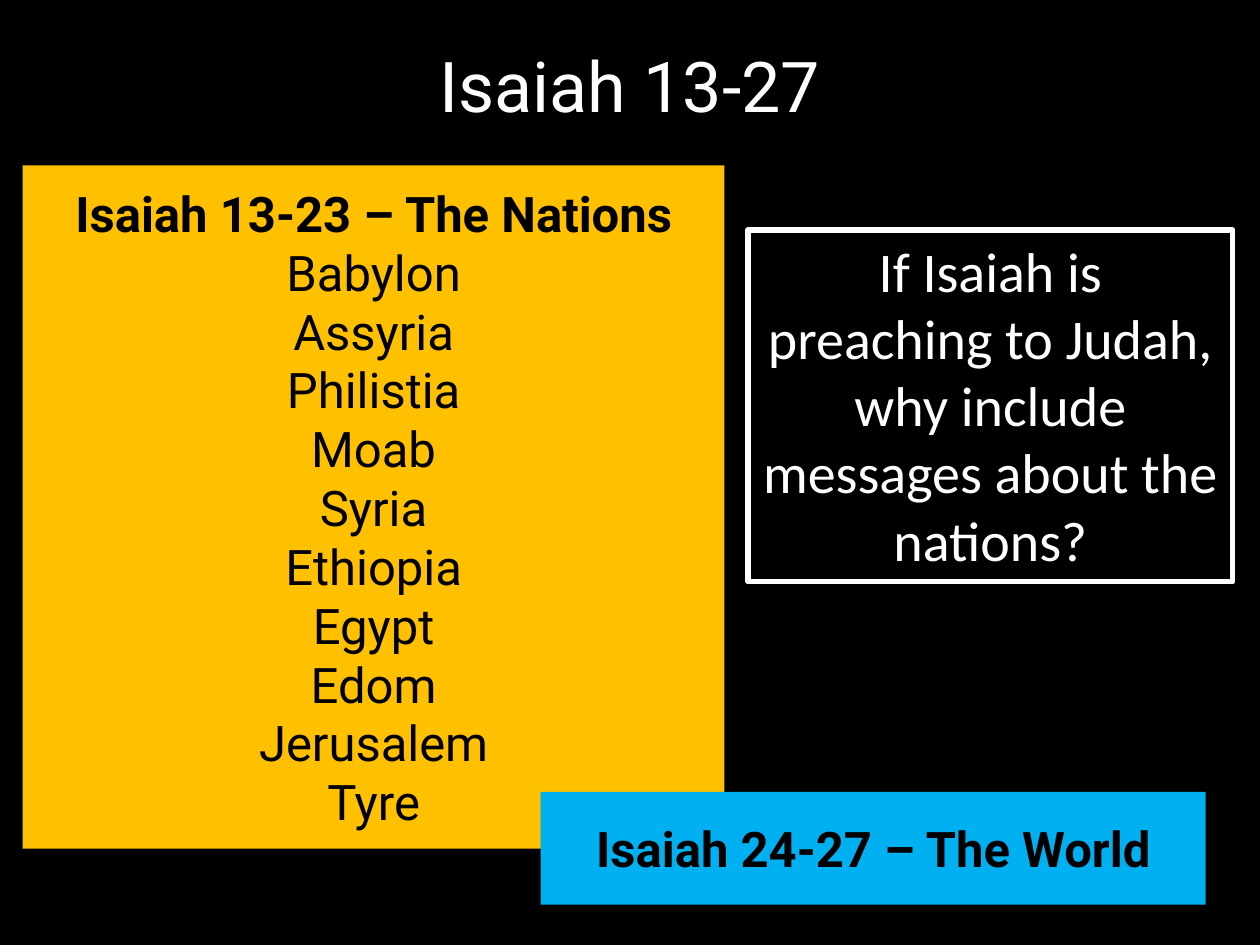
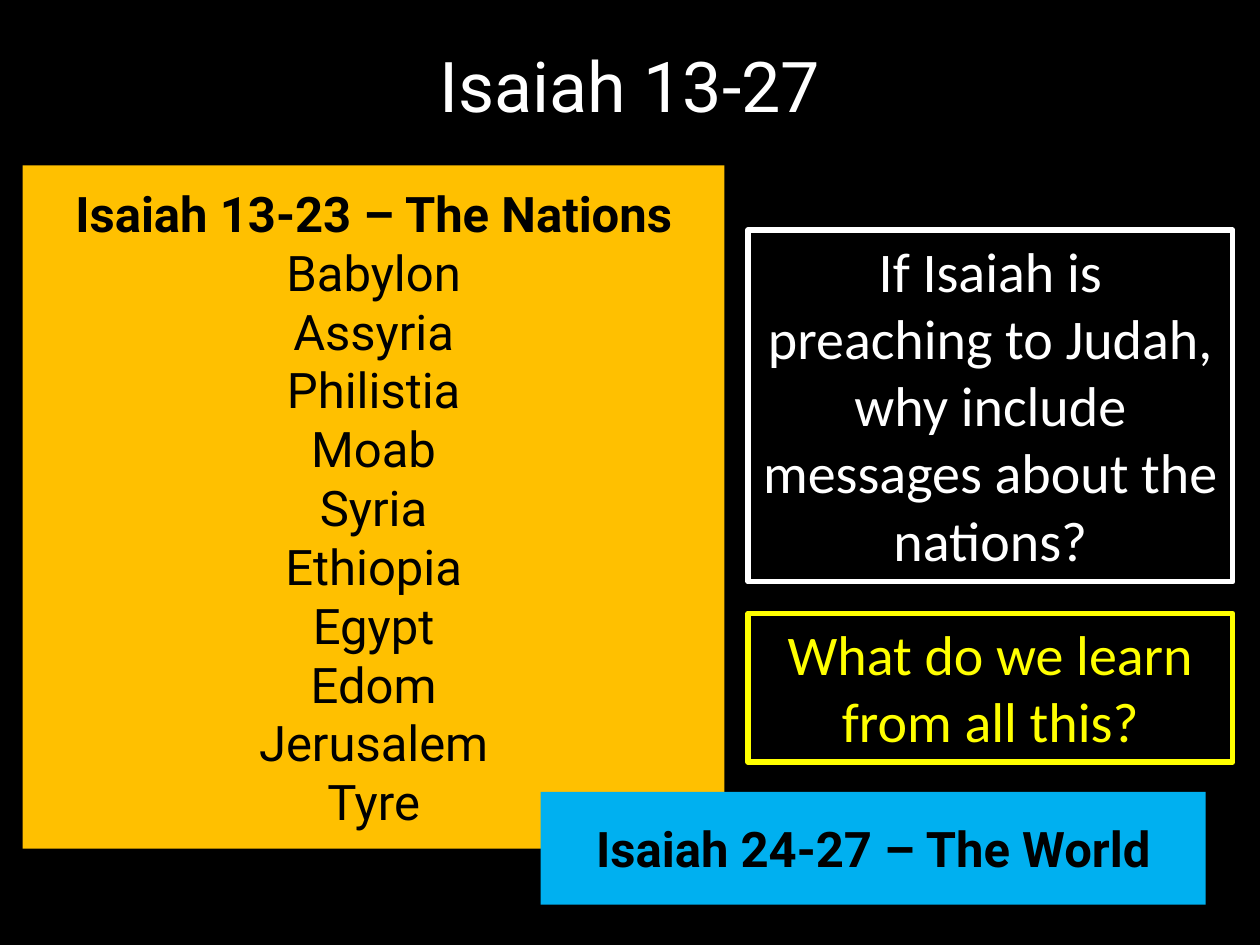
from pptx import Presentation
from pptx.dml.color import RGBColor
from pptx.enum.shapes import MSO_SHAPE as Shape
from pptx.enum.text import MSO_ANCHOR as Anchor, PP_ALIGN as Align
from pptx.util import Pt

BLACK, WHITE, YELLOW = "000000", "FFFFFF", "FFFF00"
GOLD, BLUE = "FFC000", "00B0F0"
HEADING_FONT, QUESTION_FONT = "Roboto", "Calibri"

NATIONS = ["Babylon", "Assyria", "Philistia", "Moab", "Syria",
           "Ethiopia", "Egypt", "Edom", "Jerusalem", "Tyre"]
# Each question: text, colour, top and height in points
QUESTIONS = [
    ("If Isaiah is preaching to Judah, why include messages about the nations?",
     WHITE, 131.5, 201),
    ("What do we learn from all this?", YELLOW, 350.5, 85),
]


def format_text(shape, font_name, size, color, anchor=Anchor.MIDDLE):
    shape.text_frame.word_wrap = True
    shape.text_frame.vertical_anchor = anchor
    for paragraph in shape.text_frame.paragraphs:
        paragraph.alignment = Align.CENTER
        for run in paragraph.runs:
            run.font.name = font_name
            run.font.size = Pt(size)
            run.font.color.rgb = RGBColor.from_string(color)


def add_box(slide, box, text, fill=None, line=None):
    """Add a rectangle holding text; box is left, top, width, height in points."""
    shape = slide.shapes.add_shape(Shape.RECTANGLE, *map(Pt, box))
    shape.shadow.inherit = False
    if fill:
        shape.fill.solid()
        shape.fill.fore_color.rgb = RGBColor.from_string(fill)
    else:
        shape.fill.background()
    if line:
        shape.line.color.rgb = RGBColor.from_string(line)
        shape.line.width = Pt(3)
    else:
        shape.line.fill.background()
    shape.text_frame.text = text
    return shape


presentation = Presentation()
presentation.slide_width, presentation.slide_height = Pt(720), Pt(540)
background = presentation.slide_master.background.fill
background.solid()
background.fore_color.rgb = RGBColor.from_string(BLACK)
title_only = presentation.slide_layouts[5]

# Each slide reveals one more question
for question_count in range(1, len(QUESTIONS) + 1):
    slide = presentation.slides.add_slide(title_only)

    title = slide.shapes.title
    title.left, title.top, title.width, title.height = map(Pt, (49.5, 26, 621, 61))
    title.text_frame.text = "Isaiah 13-27"
    title.text_frame.paragraphs[0].line_spacing = 0.9
    format_text(title, HEADING_FONT, 40, WHITE, Anchor.TOP)

    nations_text = "\n".join(["Isaiah 13-23 – The Nations", *NATIONS])
    nations = add_box(slide, (13, 94.5, 401, 390.5), nations_text, fill=GOLD)
    world = add_box(slide, (309, 452.5, 380, 64.5), "Isaiah 24-27 – The World", fill=BLUE)
    for panel in (nations, world):
        format_text(panel, HEADING_FONT, 28, BLACK)
        panel.text_frame.paragraphs[0].runs[0].font.bold = True

    for text, color, top, height in QUESTIONS[:question_count]:
        question = add_box(slide, (427.5, top, 277, height), text, line=color)
        format_text(question, QUESTION_FONT, 32, color, Anchor.TOP)

presentation.save("out.pptx")
